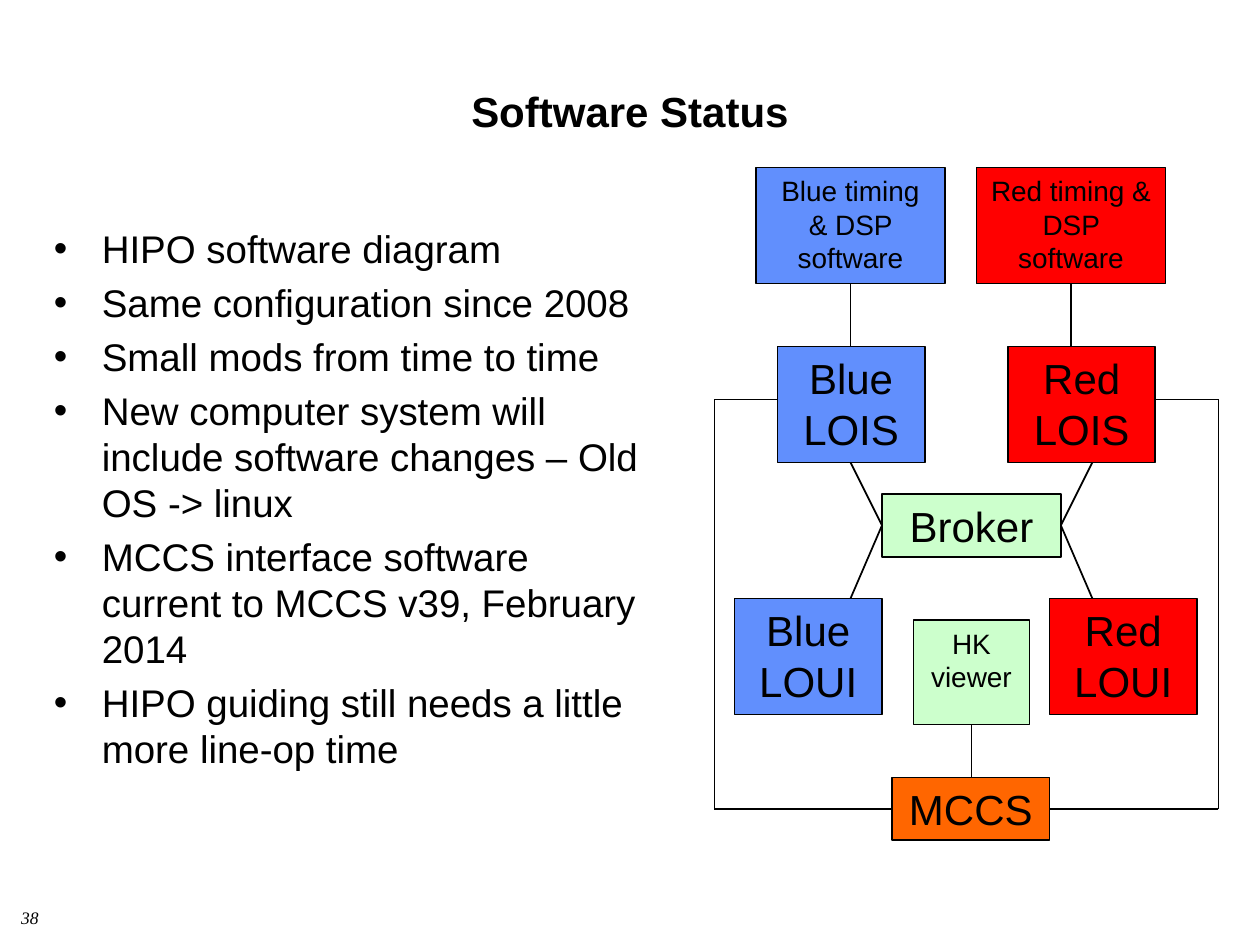
"""Build the software status slide with its block diagram."""
from lxml import etree
from pptx import Presentation
from pptx import util as u
from pptx.dml.color import RGBColor
from pptx.enum import shapes, text
from pptx.oxml.ns import qn

COLORS = {"black": "000000", "blue": "618FFD", "red": "FF0000",
          "orange": "FF6600", "green": "CCFFCC"}
TITLE = "Software Status"
PAGE_NUMBER = "38"
BULLETS = [
    "HIPO software diagram",
    "Same configuration since 2008",
    "Small mods from time to time",
    "New computer system will include software changes – Old OS -> linux",
    "MCCS interface software current to MCCS v39, February 2014",
    "HIPO guiding still needs a little more line-op time",
]
BLOCKS = [
    ("Blue LOIS", "blue", 24, (6.17, 2.75, 1.17, 0.92)),
    ("Blue LOUI", "blue", 24, (5.83, 4.75, 1.17, 0.92)),
    ("Red LOIS", "red", 24, (8, 2.75, 1.17, 0.92)),
    ("Red LOUI", "red", 24, (8.33, 4.75, 1.17, 0.92)),
    ("MCCS", "orange", 24, (7.08, 6.17, 1.25, 0.5)),
    ("Broker", "green", 24, (7, 3.92, 1.42, 0.5)),
    ("Blue timing & DSP software", "blue", 16, (6, 1.33, 1.5, 0.92)),
    ("Red timing & DSP software", "red", 16, (7.75, 1.33, 1.5, 0.92)),
    ("HK viewer", "green", 16, (7.25, 4.92, 0.92, 0.83)),
]
ROUTES = [
    [(6.75, 2.25), (6.75, 2.75)],
    [(8.5, 2.25), (8.5, 2.75)],
    [(6.75, 3.67), (7, 4.17), (6.75, 4.75)],
    [(8.67, 3.67), (8.42, 4.17), (8.67, 4.75)],
    [(6.17, 3.17), (5.67, 3.17), (5.67, 6.42), (7.08, 6.42)],
    [(9.17, 3.17), (9.67, 3.17), (9.67, 6.42), (8.33, 6.42)],
    [(7.71, 5.75), (7.71, 6.17)],
]


def color(name):
    return RGBColor.from_string(COLORS[name])


def inches(values):
    return [u.Inches(value) for value in values]


def style(para, size, face="Arial", bold=False, italic=False):
    for span in para.runs:
        font = span.font
        font.name, font.size = face, u.Pt(size)
        font.bold, font.italic = bold, italic
        font.color.rgb = color("black")


def add_text(page, place, lines, size, wrap=True, align=text.PP_ALIGN.LEFT,
             anchor=text.MSO_ANCHOR.MIDDLE, **look):
    frame = page.shapes.add_textbox(*inches(place)).text_frame
    frame.word_wrap, frame.vertical_anchor = wrap, anchor
    frame.text = "\n".join(lines)
    for para in frame.paragraphs:
        para.alignment = align
        style(para, size, **look)
    return frame


def add_bullets(frame):
    for index, para in enumerate(frame.paragraphs):
        para.space_before = u.Pt(4.4 if index else 0)
        props = para._p.get_or_add_pPr()
        props.set("marL", str(u.Inches(0.38)))
        props.set("indent", str(-u.Inches(0.38)))
        etree.SubElement(props, qn("a:buFont")).set("typeface", "Arial")
        etree.SubElement(props, qn("a:buChar")).set("char", "•")


def add_block(page, label, fill, size, place):
    box = page.shapes.add_shape(shapes.MSO_SHAPE.RECTANGLE, *inches(place))
    box.shadow.inherit = False
    box.fill.solid()
    box.fill.fore_color.rgb = color(fill)
    box.line.color.rgb, box.line.width = color("black"), u.Pt(1)
    frame = box.text_frame
    frame.word_wrap, frame.vertical_anchor = True, text.MSO_ANCHOR.TOP
    frame.text = label
    frame.paragraphs[0].alignment = text.PP_ALIGN.CENTER
    style(frame.paragraphs[0], size)


def add_route(page, points):
    for start, end in zip(points, points[1:]):
        line = page.shapes.add_connector(
            shapes.MSO_CONNECTOR.STRAIGHT, *inches(start + end))
        line.line.color.rgb, line.line.width = color("black"), u.Pt(1)
        etree.SubElement(line._element.spPr, qn("a:effectLst"))


def main():
    deck = Presentation()
    deck.slide_width, deck.slide_height = inches((10, 7.5))
    page = deck.slides.add_slide(deck.slide_layouts[6])
    add_text(page, (0.07, 7.15, 0.36, 0.27), [PAGE_NUMBER], 10, wrap=False,
             anchor=text.MSO_ANCHOR.TOP, face="Times New Roman", italic=True)
    add_text(page, (0, 0.58, 10, 0.59), [TITLE], 24,
             align=text.PP_ALIGN.CENTER, bold=True)
    add_bullets(add_text(page, (0.33, 1.08, 4.92, 5.75), BULLETS, 22))
    for block in BLOCKS:
        add_block(page, *block)
    for route in ROUTES:
        add_route(page, route)
    deck.save("out.pptx")


if __name__ == "__main__":
    main()
